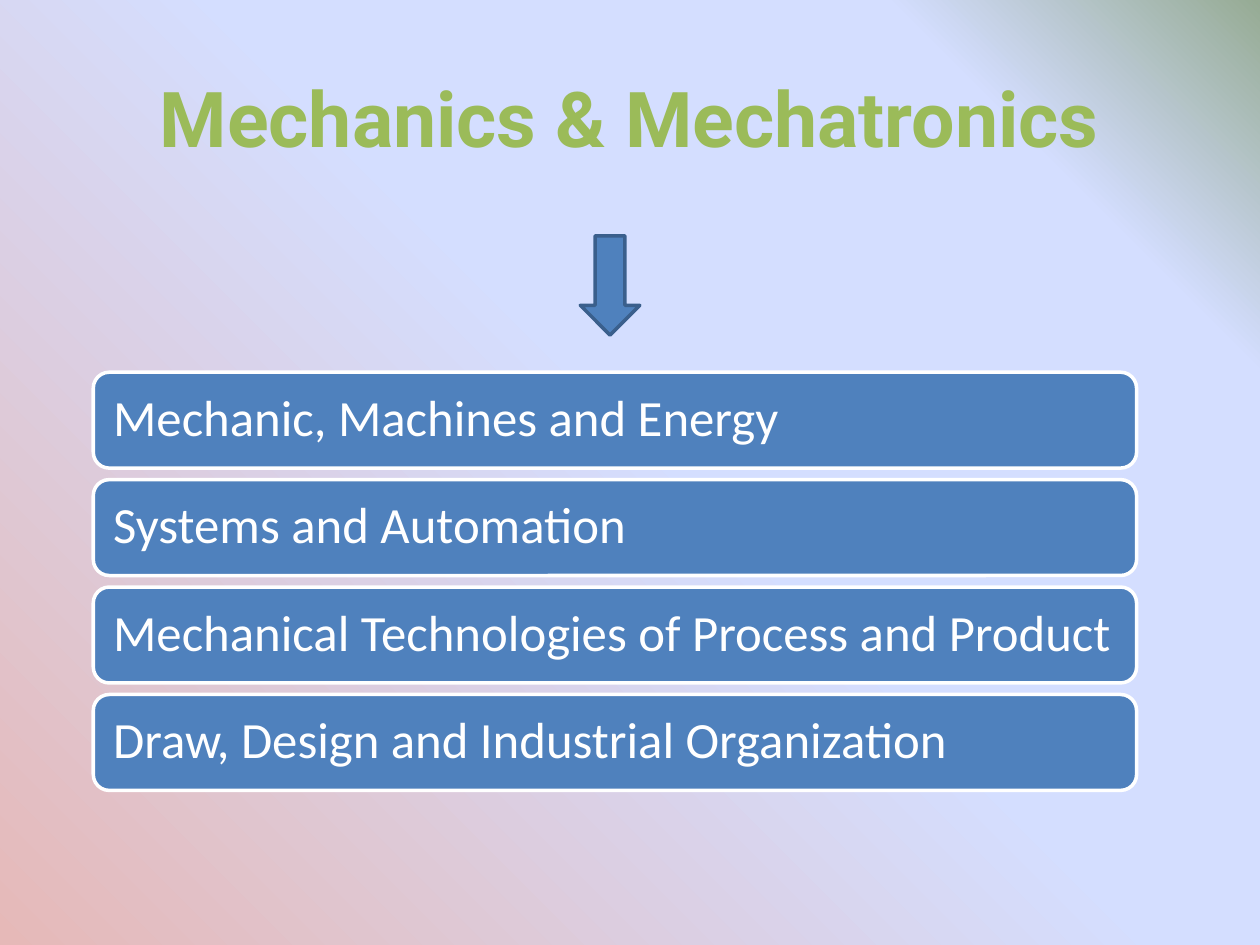
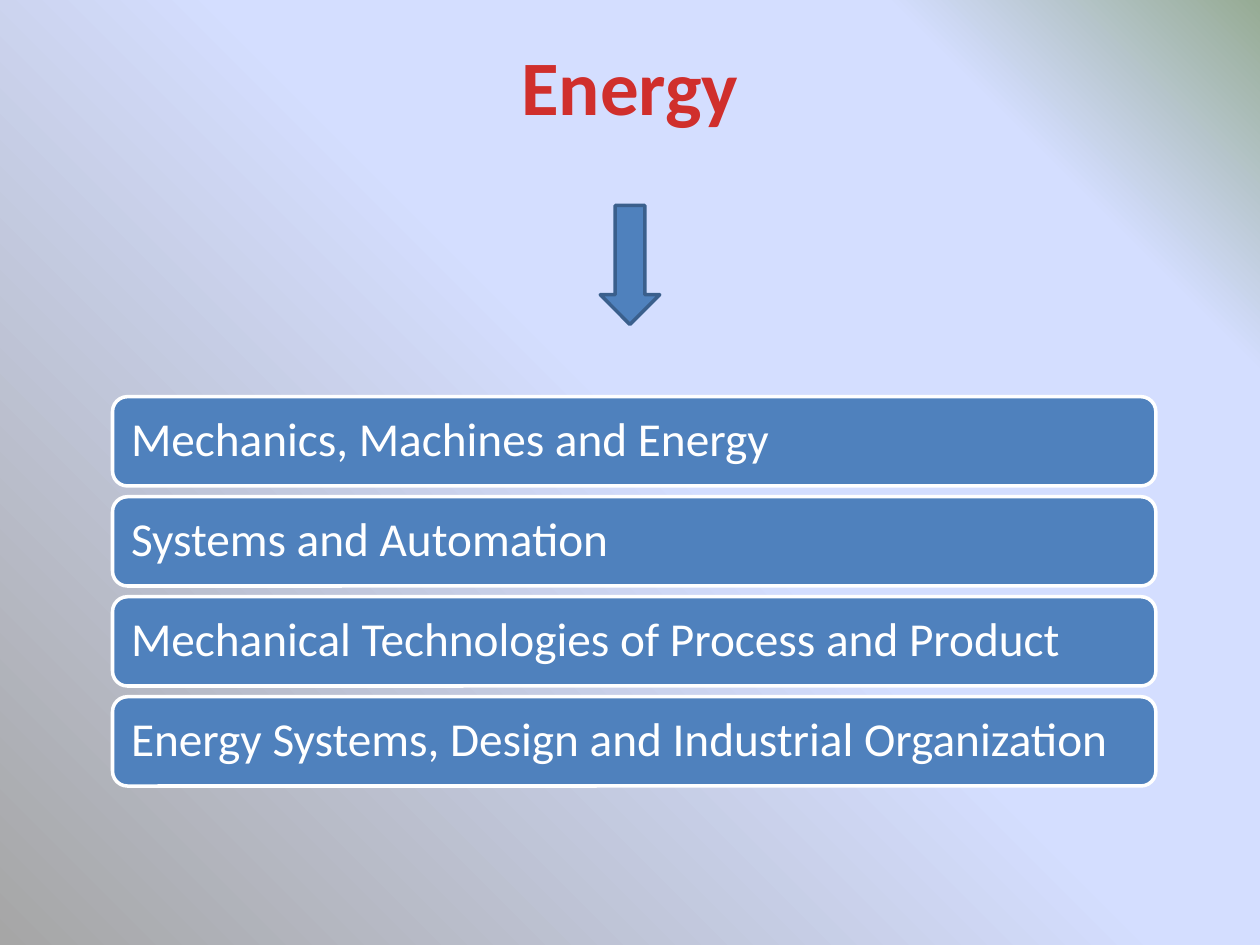
from pptx import Presentation
from pptx.dml.color import RGBColor
from pptx.enum.shapes import MSO_SHAPE as SHAPE
from pptx.enum.text import MSO_ANCHOR as ANCHOR, PP_ALIGN as ALIGN
from pptx.oxml import parse_xml
from pptx.oxml.ns import nsdecls, qn
from pptx.util import Pt

COLORS = {
    "bar": "4F81BD", "bar_line": "FFFFFF", "bar_text": "FFFFFF",
    "arrow_line": "3A5F8C", "sky": "D4DEFF", "corner": "96AB94",
    "rose": "E6B9B8", "grey": "A6A6A6",
    "green": "9BBB59", "outline": "FEFEFE",
    "red_light": "FC7C7A", "red": "D02F2C", "red_dark": "C70500",
}
RED_STOPS = [(0, "red_light"), (75, "red"), (100, "red_dark")]
GAP_RATIO = 0.12    # gap between bars, as a share of bar height
INSET_RATIO = 0.3   # bar margin, as a share of text size


def rgb(name):
    return RGBColor.from_string(COLORS[name])


def set_gradient(element, stops, angle):
    """Replace the solid fill inside element by a linear gradient (clockwise degrees)."""
    stop_xml = "".join(
        f'<a:gs pos="{pos * 1000}"><a:srgbClr val="{COLORS[name]}"/></a:gs>'
        for pos, name in stops)
    gradient = parse_xml(
        f'<a:gradFill {nsdecls("a")} rotWithShape="1"><a:gsLst>{stop_xml}</a:gsLst>'
        f'<a:lin ang="{angle * 60000}" scaled="0"/></a:gradFill>')
    solid = element.find(".//" + qn("a:solidFill"))
    solid.getparent().replace(solid, gradient)


def set_outline(run, color, width):
    run.font._element.insert(0, parse_xml(
        f'<a:ln {nsdecls("a")} w="{Pt(width)}"><a:solidFill>'
        f'<a:srgbClr val="{COLORS[color]}"/></a:solidFill></a:ln>'))


def add_slide(prs, start_color):
    slide = prs.slides.add_slide(prs.slide_layouts[5])
    fill = slide.background.fill
    fill.solid()
    fill.fore_color.rgb = rgb("sky")
    stops = [(0, start_color), (53, "sky"), (83, "sky"), (100, "corner")]
    set_gradient(slide._element, stops, 315)
    return slide


def add_title(slide, text, box, font, color):
    """Format the title placeholder and return its run."""
    title = slide.shapes.title
    title.left, title.top, title.width, title.height = map(Pt, box)
    tf = title.text_frame
    tf.text = text
    tf.vertical_anchor = ANCHOR.MIDDLE
    p = tf.paragraphs[0]
    p.alignment = ALIGN.CENTER
    r = p.runs[0]
    r.font.name, r.font.size, r.font.bold = font, Pt(44), True
    r.font.fill.solid()
    r.font.fill.fore_color.rgb = rgb(color)
    return r


def add_block(slide, kind, box, line_color):
    sp = slide.shapes.add_shape(kind, *map(Pt, box))
    sp.shadow.inherit = False
    sp.fill.solid()
    sp.fill.fore_color.rgb = rgb("bar")
    sp.line.color.rgb = rgb(line_color)
    sp.line.width = Pt(2)
    return sp


def add_bars(slide, subjects, box, size):
    """Stack one bar per subject, filling the box."""
    left, top, width, height = box
    count = len(subjects)
    bar_height = height / (count + (count - 1) * GAP_RATIO)
    pitch = bar_height * (1 + GAP_RATIO)
    for i, subject in enumerate(subjects):
        bar_box = (left, top + i * pitch, width, bar_height)
        sp = add_block(slide, SHAPE.ROUNDED_RECTANGLE, bar_box, "bar_line")
        tf = sp.text_frame
        tf.text = subject
        tf.word_wrap = True
        tf.vertical_anchor = ANCHOR.MIDDLE
        inset = Pt(size * INSET_RATIO)
        tf.margin_left = tf.margin_right = tf.margin_top = tf.margin_bottom = inset
        p = tf.paragraphs[0]
        p.alignment = ALIGN.LEFT
        p.line_spacing = 0.9
        font = p.runs[0].font
        font.name, font.size = "Calibri", Pt(size)
        font.color.rgb = rgb("bar_text")


def add_mechanics_slide(prs):
    slide = add_slide(prs, "rose")
    r = add_title(slide, "Mechanics & Mechatronics", (36, 21.6, 648, 90),
                  "Roboto", "green")
    set_outline(r, "outline", 1.5)
    add_bars(slide, ["Mechanic, Machines and Energy",
                     "Systems and Automation",
                     "Mechanical Technologies of Process and Product",
                     "Draw, Design and Industrial Organization"],
             (53.3, 212.7, 596.2, 239), 29)
    add_block(slide, SHAPE.DOWN_ARROW, (331.6, 134.8, 34, 56.7), "arrow_line")


def add_energy_slide(prs):
    slide = add_slide(prs, "grey")
    r = add_title(slide, "Energy", (36, 3.6, 648, 90), "Calibri", "red")
    set_gradient(r.font._element, RED_STOPS, 90)
    add_bars(slide, ["Mechanics, Machines and Energy",
                     "Systems and Automation",
                     "Mechanical Technologies of Process and Product",
                     "Energy Systems, Design and Industrial Organization"],
             (64.3, 226.7, 596.2, 222.5), 27)
    add_block(slide, SHAPE.DOWN_ARROW, (343, 117.4, 34, 68), "arrow_line")


def main():
    prs = Presentation()
    prs.slide_width, prs.slide_height = Pt(720), Pt(540)
    add_mechanics_slide(prs)
    add_energy_slide(prs)
    prs.save("out.pptx")


if __name__ == "__main__":
    main()
